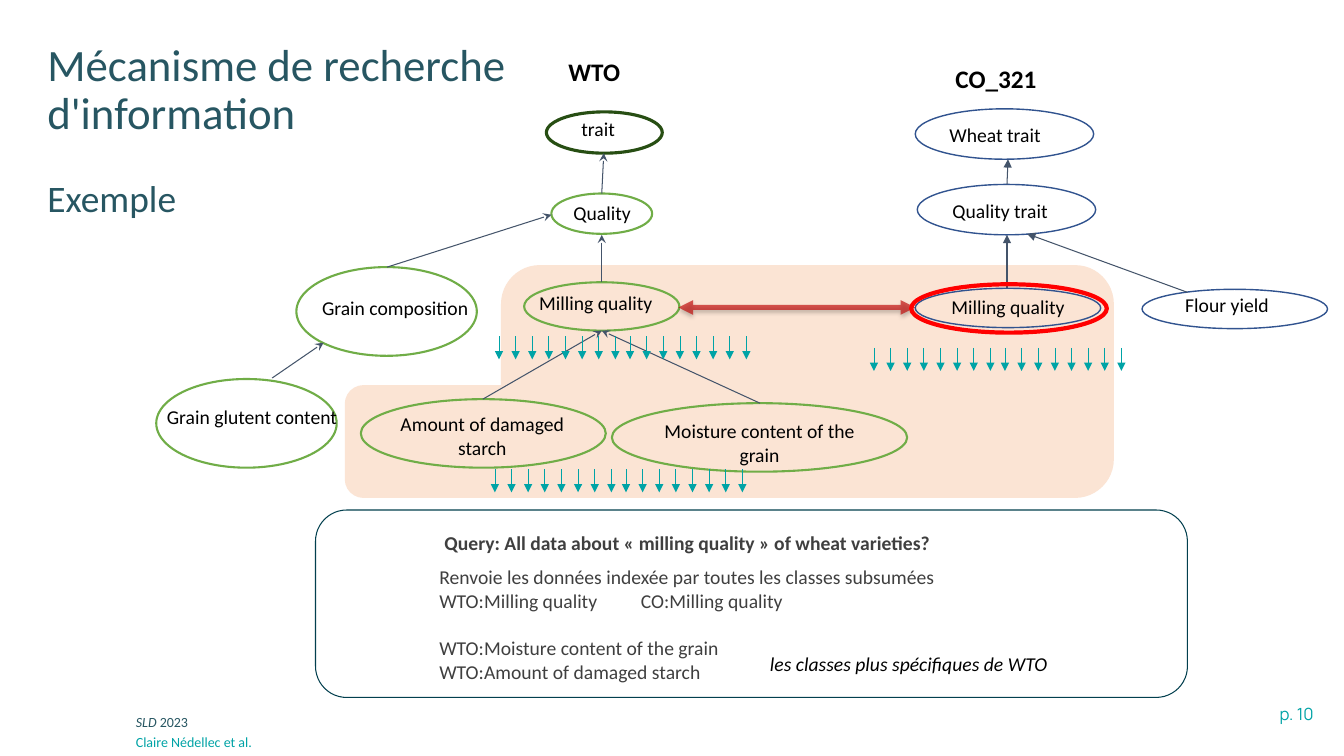
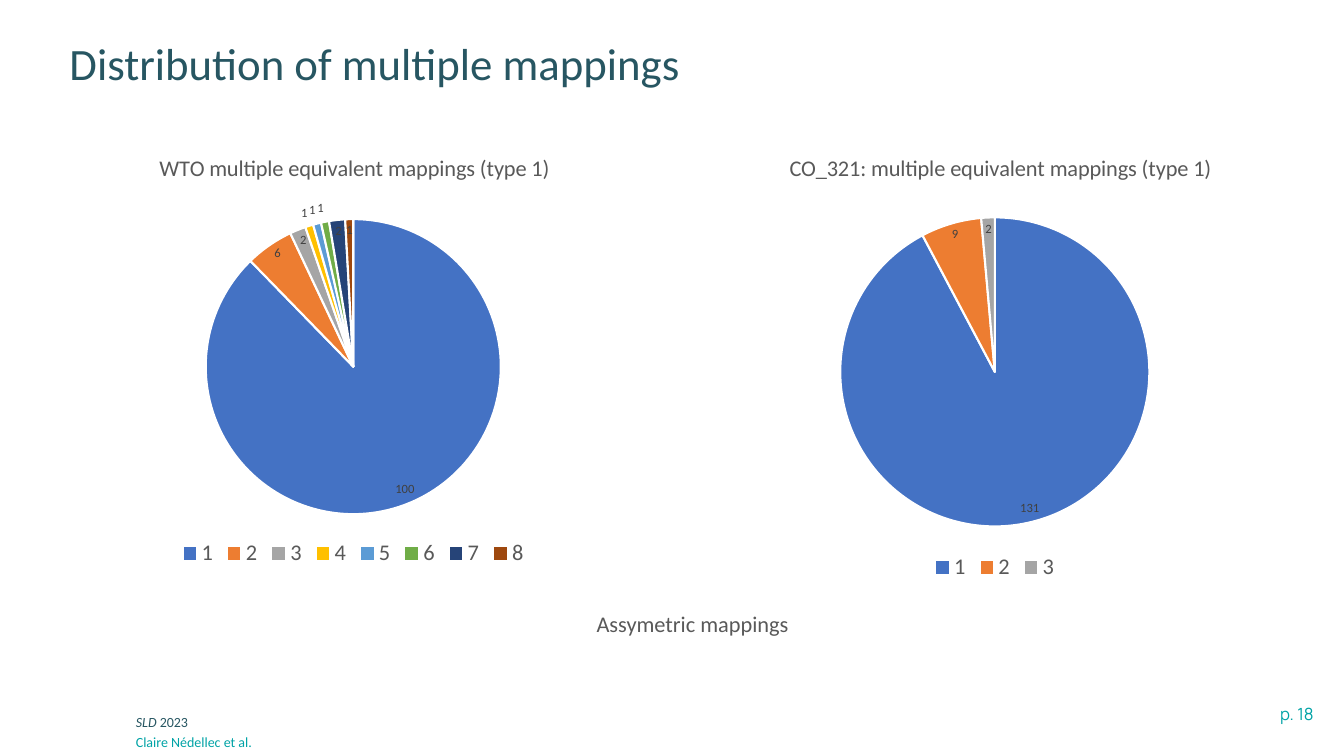
import itertools
from dataclasses import dataclass
from typing import NamedTuple, Optional

import lxml.etree
import pptx
import pptx.chart.data
import pptx.dml.color
import pptx.enum.chart
import pptx.enum.shapes
import pptx.enum.text
import pptx.oxml
import pptx.oxml.ns
import pptx.util

SHAPE = pptx.enum.shapes.MSO_SHAPE
ALIGN = pptx.enum.text.PP_ALIGN
ANCHOR = pptx.enum.text.MSO_ANCHOR
qn = pptx.oxml.ns.qn

COLUMNS, ROWS = 133.33, 75


@dataclass(frozen=True)
class Theme:
    font: str = "Calibri"
    page_font: str = "Manrope"
    title: str = "275662"
    accent: str = "00A3A6"
    text: str = "000000"
    body: str = "3F3F3F"
    chart_text: str = "595959"
    value_text: str = "404040"
    white: str = "FFFFFF"
    panel: str = "FBE4D4"
    frame: str = "023F4E"
    green: str = "70AD47"
    dark_green: str = "274E13"
    blue: str = "31538F"
    link: str = "44546A"
    match: str = "C00000"
    highlight: str = "FF0000"
    slices: tuple[str, ...] = ("4472C4", "ED7D31", "A5A5A5", "FFC000",
                               "5B9BD5", "70AD47", "264478", "9E480E")
    title_size: float = 32
    subtitle_size: float = 26.7
    heading_size: float = 18
    caption_size: float = 16
    body_size: float = 14
    page_size: float = 12
    footer_size: float = 10
    value_size: float = 9


THEME = Theme()


class Box(NamedTuple):
    left: float
    top: float
    width: float
    height: float


class Point(NamedTuple):
    column: float
    row: float


@dataclass(frozen=True)
class Node:
    label: str
    outline: Box
    label_box: Box
    color: str = THEME.green
    weight: float = 1.5
    align: Optional[ALIGN] = None


@dataclass(frozen=True)
class Link:
    start: Point
    end: Point
    head: str = "stealth"


@dataclass(frozen=True)
class Pie:
    title: str
    box: Box
    values: tuple[int, ...]
    plot: Box


LEFT_NODES = (
    Node("trait", Box(54.2, 11.1, 11.5, 4.1), Box(56.7, 11.1, 8, 3.4), THEME.dark_green, 2.25),
    Node("Quality", Box(54.7, 19.2, 10, 4), Box(55.9, 19.4, 11.7, 3.4)),
    Node("Milling quality", Box(52, 28, 15.4, 4.8), Box(52.5, 28.4, 20.2, 3.4)),
    Node("Grain composition", Box(29.4, 26.5, 17.9, 8.8), Box(29.1, 28.9, 20.2, 7.1),
         align=ALIGN.CENTER),
    Node("Grain glutent content", Box(15.5, 37.6, 17.9, 8.8), Box(14.9, 39.7, 20.2, 7.1),
         align=ALIGN.CENTER),
    Node("Amount of damaged starch", Box(35.8, 39.6, 24.3, 6.8), Box(36.9, 40.4, 21.9, 6.1),
         align=ALIGN.CENTER),
    Node("Moisture content of the grain", Box(60.7, 40, 29.3, 6.8), Box(64.4, 41.1, 21.9, 3.4),
         align=ALIGN.CENTER),
)
RIGHT_NODES = tuple(Node(*parts, THEME.blue, 1) for parts in (
    ("Wheat trait", Box(90.8, 10.8, 17.7, 5), Box(93.2, 11.7, 14.4, 3.4)),
    ("Quality trait", Box(91, 18.3, 17.7, 5), Box(93.5, 19.2, 14.4, 3.4)),
    ("Milling quality", Box(90.8, 28.6, 18.4, 3.9), Box(93.4, 28.8, 16.7, 3.4)),
    ("Flour yield", Box(113.3, 28.7, 18.4, 3.9), Box(116.6, 28.6, 16.7, 3.4)),
))
LINKS = (
    Link(Point(59.9, 15.2), Point(59.7, 19.2)),
    Link(Point(59.7, 23.3), Point(59.7, 28)),
    Link(Point(59.7, 32.8), Point(75.4, 40)),
    Link(Point(59.7, 32.8), Point(47.9, 39.6)),
    Link(Point(54.7, 21.3), Point(38.4, 26.5)),
    Link(Point(32.1, 34), Point(27, 37.5)),
    Link(Point(100, 15.8), Point(99.9, 18.3), "triangle"),
    Link(Point(99.9, 23.3), Point(99.9, 28.6), "triangle"),
    Link(Point(101.9, 23.2), Point(117.8, 29), "triangle"),
)
DATA_ARROW_ROWS = (Point(49.1, 46.55), Point(86.7, 34.5), Point(49.5, 33.35))
PIES = (
    Pie("CO_321: multiple equivalent mappings (type 1)", Box(61.6, 13, 74.2, 45.1),
        (131, 9, 2), Box(0.29, 0.19, 0.42, 0.68)),
    Pie("WTO multiple equivalent mappings (type 1)", Box(0, 13, 70.1, 43.7),
        (100, 6, 2, 1, 1, 1, 2, 1), Box(0.29, 0.2, 0.42, 0.67)),
)


def cells(count: float) -> int:
    return pptx.util.Inches(count / 10)


def rgb(color: str) -> pptx.dml.color.RGBColor:
    return pptx.dml.color.RGBColor.from_string(color)


def style_font(font, size: float, color: str, name: str = THEME.font,
               bold: bool = False, italic: bool = False) -> None:
    font.name, font.size = name, pptx.util.Pt(size)
    font.bold, font.italic = bold, italic
    font.color.rgb = rgb(color)


def add_frame(slide, box: Box, anchor=ANCHOR.TOP, inset: Point = Point(1, 0.5)):
    frame = slide.shapes.add_textbox(*map(cells, box)).text_frame
    frame.word_wrap = True
    frame.vertical_anchor = anchor
    frame.margin_left = frame.margin_right = cells(inset.column)
    frame.margin_top = frame.margin_bottom = cells(inset.row)
    return frame


def write(frame, text: str, *, size: float = THEME.body_size, color: str = THEME.text,
          name: str = THEME.font, bold: bool = False, italic: bool = False, align=None,
          space_before: float = 0, line_spacing: Optional[float] = None,
          continues: bool = False) -> None:
    paragraph = frame.paragraphs[-1]
    if paragraph.runs and not continues:
        paragraph = frame.add_paragraph()
    if align is not None:
        paragraph.alignment = align
    if space_before:
        paragraph.space_before = pptx.util.Pt(space_before)
    if line_spacing:
        paragraph.line_spacing = line_spacing
    run = paragraph.add_run()
    run.text = text
    style_font(run.font, size, color, name, bold, italic)


def add_outline(slide, kind, box: Box, *, fill: Optional[str] = None,
                line: Optional[str] = None, weight: float = 1) -> None:
    shape = slide.shapes.add_shape(kind, *map(cells, box))
    shape.shadow.inherit = False
    if fill:
        shape.fill.solid()
        shape.fill.fore_color.rgb = rgb(fill)
    else:
        shape.fill.background()
    if line:
        shape.line.color.rgb = rgb(line)
        shape.line.width = pptx.util.Pt(weight)
    else:
        shape.line.fill.background()


def add_arrow(slide, start: Point, end: Point, *, color: str, weight: float,
              head: Optional[str] = None, tail: Optional[str] = None):
    connector = slide.shapes.add_connector(
        pptx.enum.shapes.MSO_CONNECTOR.STRAIGHT, *map(cells, (*start, *end)))
    connector.line.color.rgb = rgb(color)
    connector.line.width = pptx.util.Pt(weight)
    line = connector.line._get_or_add_ln()
    for tag, kind in (("a:headEnd", head), ("a:tailEnd", tail)):
        if kind:
            lxml.etree.SubElement(line, qn(tag), type=kind)
    lxml.etree.SubElement(connector._element.spPr, qn("a:effectLst"))
    return connector


def add_match_arrow(slide) -> None:
    connector = add_arrow(slide, Point(67.3, 30.5), Point(90.8, 30.5), color=THEME.match,
                          weight=3.5, head="triangle", tail="triangle")
    properties = connector._element.spPr
    line_color = next(properties.iter(qn("a:srgbClr")))
    lxml.etree.SubElement(line_color, qn("a:alpha"), val="64000")
    shadow = lxml.etree.SubElement(
        properties.find(qn("a:effectLst")), qn("a:outerShdw"),
        blurRad=str(pptx.util.Pt(3)), dist=str(pptx.util.Pt(2)), dir="5400000", rotWithShape="0")
    shadow_color = lxml.etree.SubElement(shadow, qn("a:srgbClr"), val=THEME.text)
    lxml.etree.SubElement(shadow_color, qn("a:alpha"), val="35000")


def add_data_arrows(slide, origin: Point) -> None:
    for half, index in itertools.product(range(2), range(8)):
        column = origin.column + 13 * half + 1.65 * index
        add_arrow(slide, Point(column, origin.row), Point(column, origin.row + 2.3),
                  color=THEME.accent, weight=0.5, tail="triangle")


def add_node(slide, node: Node) -> None:
    add_outline(slide, SHAPE.OVAL, node.outline, line=node.color, weight=node.weight)
    write(add_frame(slide, node.label_box), node.label, align=node.align)


def set_layout(element, **shares: float) -> None:
    layout = element.find(qn("c:layout"))
    if layout is None:
        layout = pptx.oxml.parse_xml(
            f'<c:layout xmlns:c="{pptx.oxml.ns.nsuri("c")}"/>')
        position = 1 if element.tag == qn("c:title") else 0
        element.insert(position, layout)
    manual = lxml.etree.SubElement(layout, qn("c:manualLayout"))
    if "w" in shares:
        lxml.etree.SubElement(manual, qn("c:layoutTarget"), val="inner")
    for axis in ("x", "y"):
        lxml.etree.SubElement(manual, qn(f"c:{axis}Mode"), val="edge")
    for name, share in shares.items():
        lxml.etree.SubElement(manual, qn(f"c:{name}"), val=str(share))


def add_pie(slide, pie: Pie) -> None:
    data = pptx.chart.data.CategoryChartData()
    data.categories = [str(number + 1) for number in range(len(pie.values))]
    data.add_series("Series 1", pie.values)
    chart = slide.shapes.add_chart(
        pptx.enum.chart.XL_CHART_TYPE.PIE, *map(cells, pie.box), data).chart
    style_font(chart.font, THEME.footer_size, THEME.text)
    chart.has_title = True
    write(chart.chart_title.text_frame, pie.title, size=THEME.caption_size,
          color=THEME.chart_text)
    chart.chart_title.include_in_layout = False
    set_layout(chart.chart_title._element, x=0.22, y=0.04)
    plot_area = chart._chartSpace.chart.plotArea
    set_layout(plot_area, x=pie.plot.left, y=pie.plot.top, w=pie.plot.width, h=pie.plot.height)
    chart.has_legend = True
    chart.legend.position = pptx.enum.chart.XL_LEGEND_POSITION.BOTTOM
    chart.legend.include_in_layout = False
    style_font(chart.legend.font, THEME.caption_size, THEME.chart_text)
    plot = chart.plots[0]
    plot.vary_by_categories = True
    plot.has_data_labels = True
    labels = plot.data_labels
    labels.show_value = True
    labels.show_percentage = False
    labels.number_format, labels.number_format_is_linked = "0", False
    labels.position = pptx.enum.chart.XL_LABEL_POSITION.BEST_FIT
    style_font(labels.font, THEME.value_size, THEME.value_text)
    for index, color in enumerate(THEME.slices[:len(pie.values)]):
        form = plot.series[0].points[index].format
        form.fill.solid()
        form.fill.fore_color.rgb = rgb(color)
        form.line.color.rgb = rgb(THEME.white)
        form.line.width = pptx.util.Pt(1.5)


def add_slide(presentation, page: int, title: str, title_box: Box):
    slide = presentation.slides.add_slide(presentation.slide_layouts[6])
    write(add_frame(slide, Box(108.5, 69.3, 22.8, 3)), f"p. {page}", size=THEME.page_size,
          color=THEME.accent, name=THEME.page_font, align=ALIGN.RIGHT)
    event = add_frame(slide, Box(12.5, 70.3, 73.4, 2.7))
    write(event, "SLD ", size=THEME.footer_size, color=THEME.title, italic=True)
    write(event, "2023", size=THEME.footer_size, color=THEME.title, continues=True)
    write(add_frame(slide, Box(12.5, 72.3, 73.4, 2.7)), "Claire Nédellec et al.",
          size=THEME.footer_size, color=THEME.accent)
    heading = add_frame(slide, title_box, inset=Point(1.3, 0.7))
    write(heading, title, size=THEME.title_size, color=THEME.title, line_spacing=0.9)
    return slide, heading


def build_search_slide(presentation) -> None:
    slide, heading = add_slide(presentation, 10, "Mécanisme de recherche d'information",
                               Box(3.4, 3.5, 48.6, 6.6))
    write(heading, "Exemple", size=THEME.subtitle_size, color=THEME.title,
          line_spacing=0.9, space_before=29)
    for panel in (Box(34.2, 38.2, 42.8, 11.2), Box(49.7, 26.3, 60.8, 23.1)):
        add_outline(slide, SHAPE.ROUNDED_RECTANGLE, panel, fill=THEME.panel)
    for text, box in (("WTO", Box(55.4, 5.1, 10.8, 4)), ("CO_321", Box(93.8, 5.8, 11.7, 4))):
        write(add_frame(slide, box), text, size=THEME.heading_size, bold=True)
    for node in LEFT_NODES + RIGHT_NODES:
        add_node(slide, node)
    for link in LINKS:
        add_arrow(slide, link.start, link.end, color=THEME.link, weight=0.75, head=link.head)
    add_match_arrow(slide)
    add_outline(slide, SHAPE.OVAL, Box(90.4, 28.2, 19.4, 4.8), line=THEME.highlight, weight=3)
    add_outline(slide, SHAPE.ROUNDED_RECTANGLE, Box(31.3, 50.6, 86.5, 18.6),
                line=THEME.frame, weight=0.75)
    write(add_frame(slide, Box(34.6, 50.4, 67.2, 6.8), ANCHOR.MIDDLE),
          "Query: All data about « milling quality » of wheat varieties?",
          color=THEME.body, bold=True, align=ALIGN.CENTER)
    answer = add_frame(slide, Box(42.6, 57, 74, 9.8), ANCHOR.MIDDLE)
    for text, gap in (("Renvoie les données indexée par toutes les classes subsumées", 0),
                      ("WTO:Milling quality\tCO:Milling quality", 0),
                      ("WTO:Moisture content of the grain", 17),
                      ("WTO:Amount of damaged starch", 0)):
        write(answer, text, color=THEME.body, space_before=gap)
    write(add_frame(slide, Box(75.4, 64.2, 32, 3.4)), "les classes plus spécifiques de WTO",
          italic=True)
    for origin in DATA_ARROW_ROWS:
        add_data_arrows(slide, origin)


def build_distribution_slide(presentation) -> None:
    slide, _ = add_slide(presentation, 18, "Distribution of multiple mappings",
                         Box(5.6, 3.4, 106.7, 6.7))
    for pie in PIES:
        add_pie(slide, pie)
    write(add_frame(slide, Box(58.2, 60, 23, 3.7)), "Assymetric mappings",
          size=THEME.caption_size, color=THEME.chart_text)


def main() -> None:
    presentation = pptx.Presentation()
    presentation.slide_width, presentation.slide_height = cells(COLUMNS), cells(ROWS)
    build_search_slide(presentation)
    build_distribution_slide(presentation)
    presentation.save("out.pptx")


if __name__ == "__main__":
    main()
